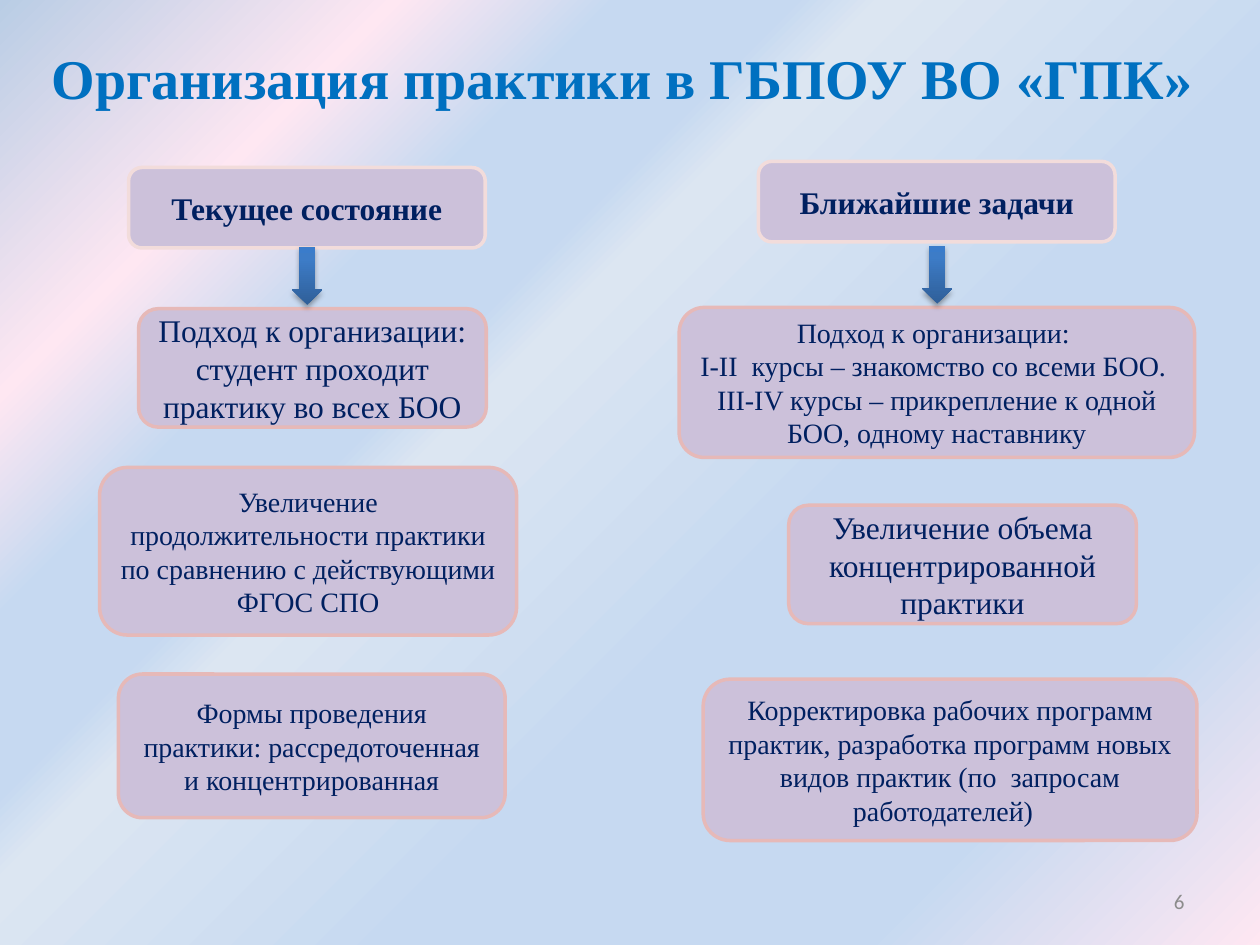
"""Build the slide comparing the current state of student practice with the next tasks."""
from dataclasses import dataclass

from lxml import etree
from pptx import Presentation
from pptx import util as u
from pptx.dml.color import RGBColor
from pptx.enum import shapes, text
from pptx.oxml import ns

NAVY = RGBColor(0x00, 0x20, 0x60)
TITLE_BLUE = RGBColor(0x00, 0x70, 0xC0)
GRAY = RGBColor(0x8C, 0x8C, 0x8C)
LILAC = RGBColor(0xCC, 0xC1, 0xDA)
PALE_PINK = RGBColor(0xF2, 0xDC, 0xDB)
PINK = RGBColor(0xE6, 0xB9, 0xB8)
SKY = RGBColor(0xC6, 0xD9, 0xF1)
BLUSH = RGBColor(0xFE, 0xE7, 0xF2)

BACKGROUND_STOPS = [
    (0, RGBColor(0xB9, 0xCD, 0xE5)), (18, BLUSH), (28, SKY), (36, SKY),
    (40, RGBColor(0xDC, 0xE6, 0xF2)), (61, SKY), (82, SKY), (100, BLUSH),
]
ARROW_STOPS = [
    (0, RGBColor(0x2F, 0x5F, 0x99)), (80, RGBColor(0x3D, 0x7C, 0xC7)),
    (100, RGBColor(0x3A, 0x7C, 0xCB)),
]
SERIF = "Times New Roman"
HEADING = {"name": SERIF, "size": u.Pt(18), "bold": True}
LARGE = {"name": SERIF, "size": u.Pt(18)}
SMALL = {"name": SERIF, "size": u.Pt(16)}


@dataclass(frozen=True)
class Area:
    left: float
    top: float
    width: float
    height: float

    def lengths(self) -> list:
        return [u.Pt(value) for value in (self.left, self.top, self.width, self.height)]


@dataclass(frozen=True)
class Card:
    area: Area
    lines: tuple
    style: dict
    border: RGBColor = PINK


CARDS = [
    Card(Area(73.5, 95.7, 203.8, 46), ("Текущее состояние",), HEADING, PALE_PINK),
    Card(Area(79.2, 176.4, 198.7, 67.7),
         ("Подход к организации: студент проходит практику во всех БОО",), LARGE),
    Card(Area(56.9, 267.1, 238.3, 95.8),
         ("Увеличение продолжительности практики по сравнению с действующими ФГОС СПО",), SMALL),
    Card(Area(67.7, 385.2, 221, 82.1),
         ("Формы проведения практики: рассредоточенная и концентрированная",), SMALL),
    Card(Area(433.4, 92.2, 203.8, 46), ("Ближайшие задачи",), HEADING, PALE_PINK),
    Card(Area(388.1, 175.7, 294.5, 85.7),
         ("Подход к организации: ", "I-II  курсы – знакомство со всеми БОО. ",
          "III-IV курсы – прикрепление к одной БОО, одному наставнику"), SMALL),
    Card(Area(450.7, 288.7, 198.7, 67.7),
         ("Увеличение объема концентрированной практики",), LARGE),
    Card(Area(401.8, 388.1, 282.2, 92.2),
         ("Корректировка рабочих программ практик, разработка программ новых видов практик "
          "(по  запросам работодателей)  ",), SMALL),
]
ARROWS = [Area(167, 141.1, 17.3, 33.1), Area(527, 140.4, 17.3, 33.1)]


def add_node(parent, tag: str, **attributes):
    values = {name: str(value) for name, value in attributes.items()}
    return etree.SubElement(parent, ns.qn(tag), values)


def set_gradient(fill, owner, stops: list, angle: int) -> None:
    fill.gradient()
    gradient = owner.xpath(".//a:gradFill")[0]
    stop_list = gradient.find(ns.qn("a:gsLst"))
    for old_stop in list(stop_list):
        stop_list.remove(old_stop)
    for position, color in stops:
        stop = add_node(stop_list, "a:gs", pos=position * 1000)
        add_node(stop, "a:srgbClr", val=color)
    gradient.find(ns.qn("a:lin")).set("ang", str(angle * 60000))


def write_text(shape, lines: tuple, style: dict, color: RGBColor,
               align=text.PP_ALIGN.CENTER, anchor=text.MSO_ANCHOR.MIDDLE) -> None:
    frame = shape.text_frame
    frame.word_wrap = True
    frame.vertical_anchor = anchor
    for index, line in enumerate(lines):
        para = frame.add_paragraph() if index else frame.paragraphs[0]
        para.alignment = align
        span = para.add_run()
        span.text = line
        for name, value in style.items():
            setattr(span.font, name, value)
        span.font.color.rgb = color


def add_card(page, card: Card) -> None:
    box = page.shapes.add_shape(shapes.MSO_SHAPE.ROUNDED_RECTANGLE, *card.area.lengths())
    box.shadow.inherit = False
    box.fill.solid()
    box.fill.fore_color.rgb = LILAC
    box.line.color.rgb = card.border
    box.line.width = u.Pt(2)
    write_text(box, card.lines, card.style, NAVY)


def add_arrow(page, area: Area) -> None:
    arrow = page.shapes.add_shape(shapes.MSO_SHAPE.DOWN_ARROW, *area.lengths())
    set_gradient(arrow.fill, arrow.element, ARROW_STOPS, 270)
    arrow.line.fill.background()
    arrow.shadow.inherit = False
    effects = arrow.element.spPr.find(ns.qn("a:effectLst"))
    shadow = add_node(effects, "a:outerShdw", blurRad=u.Pt(3.1), dist=u.Pt(1.8),
                      dir=90 * 60000, rotWithShape=0)
    add_node(add_node(shadow, "a:srgbClr", val="000000"), "a:alpha", val=35000)


def main() -> None:
    deck = Presentation()
    deck.slide_width, deck.slide_height = u.Pt(720), u.Pt(540)
    page = deck.slides.add_slide(deck.slide_layouts[6])
    set_gradient(page.background.fill, page.element, BACKGROUND_STOPS, 45)

    number = page.shapes.add_textbox(*Area(516.2, 500.4, 167.8, 28.8).lengths())
    write_text(number, ("6",), {"name": "Calibri", "size": u.Pt(12)}, GRAY,
               align=text.PP_ALIGN.RIGHT)
    title = page.shapes.add_textbox(*Area(-8.6, 21.6, 728.6, 46.1).lengths())
    write_text(title, ("Организация практики в ГБПОУ ВО «ГПК»",),
               {"name": SERIF, "size": u.Pt(32), "bold": True}, TITLE_BLUE,
               anchor=text.MSO_ANCHOR.TOP)

    for card in CARDS:
        add_card(page, card)
    for area in ARROWS:
        add_arrow(page, area)
    deck.save("out.pptx")


if __name__ == "__main__":
    main()
